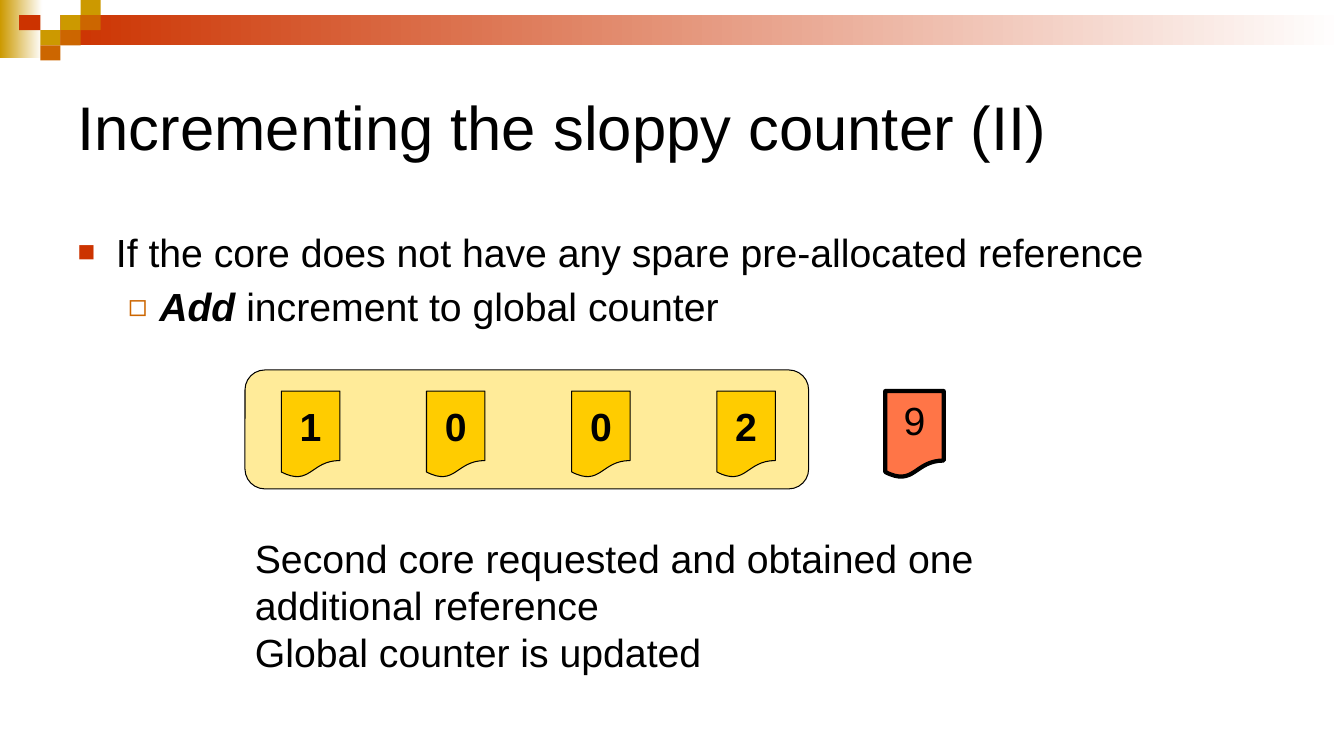
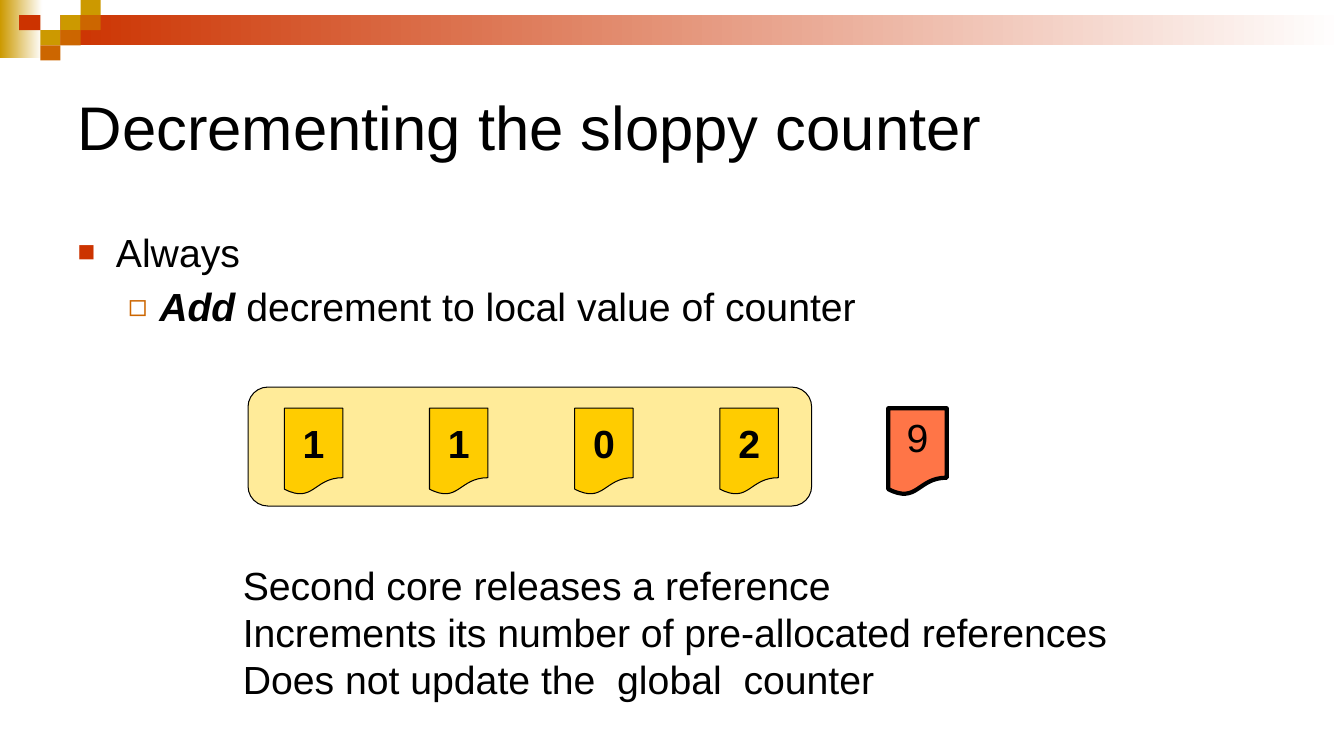
from pptx import Presentation
from pptx.dml.color import RGBColor
from pptx.enum.shapes import MSO_SHAPE as Preset
from pptx.enum.text import MSO_ANCHOR as Anchor, PP_ALIGN as Align
from pptx.oxml.ns import qn
from pptx.util import Inches, Pt
from lxml.etree import SubElement

COLORS = {
    "text": "000000", "white": "FFFFFF", "gold": "CC9900", "red": "CC3300",
    "orange": "CC6600", "panel": "FFEB99", "local": "FFCC00", "global": "FF7547",
}
FONT = "Arial"
BODY_SIZE = 28

# Bullet per list level: left indent, hanging indent, character, colour, size in percent
BULLETS = [
    (0.38, 0.38, "■", "red", 75),
    (0.81, 0.31, "◻", "orange", 80),
]

# Corner mosaic: left, top, width, colour
TILE_HEIGHT = 0.15
TILES = [
    (0.6, 0.15, 0.2, "gold"), (0.8, 0, 0.2, "gold"), (0.8, 0.15, 0.2, "orange"),
    (0.4, 0.3, 0.2, "gold"), (0.19, 0.15, 0.21, "red"), (0.6, 0.3, 0.2, "orange"),
    (0.4, 0.45, 0.2, "orange"),
]

SLIDES = [
    {
        "title": "Incrementing the sloppy counter (II)",
        "condition": "If the core does not have any spare pre-allocated reference",
        "action": " increment to global counter",
        "counters": (2.43, 3.67, "1002", "9"),
        "caption": (2.43, 5.25, "Second core requested and obtained one\n"
                                "additional reference\nGlobal counter is updated"),
    },
    {
        "title": "Decrementing the sloppy counter",
        "condition": "Always",
        "action": " decrement to local value of counter",
        "counters": (2.46, 3.84, "1102", "9"),
        "caption": (2.31, 5.52, "Second core releases a reference\n"
                                "Increments its number of pre-allocated references\n"
                                "Does not update the  global  counter"),
    },
]


def rgb(name):
    return RGBColor.from_string(COLORS[name])


def place(shape, left, top, width, height):
    shape.left, shape.top = Inches(left), Inches(top)
    shape.width, shape.height = Inches(width), Inches(height)


def format_text(text_frame, size=BODY_SIZE, align=Align.LEFT, bold=False):
    for para in text_frame.paragraphs:
        para.alignment = align
        for span in para.runs:
            span.font.name = FONT
            span.font.size = Pt(size)
            span.font.bold = bold
            span.font.color.rgb = rgb("text")


def add_box(shapes, preset, at, color, line_width=None, fade=False):
    """Add a filled shape, outlined in black or fading to white on the right."""
    box = shapes.add_shape(preset, *map(Inches, at))
    box.shadow.inherit = False
    if fade:
        box.fill.gradient()
        box.fill.gradient_angle = 0
        for stop, name in zip(box.fill.gradient_stops, (color, "white")):
            stop.color.rgb = rgb(name)
    else:
        box.fill.solid()
        box.fill.fore_color.rgb = rgb(color)
    if line_width:
        box.line.color.rgb = rgb("text")
        box.line.width = Pt(line_width)
    else:
        box.line.fill.background()
    return box


def set_bullet(para, level):
    indent, hanging, char, color, percent = BULLETS[level]
    para.level = level
    props = para._p.get_or_add_pPr()
    props.set("marL", str(Inches(indent)))
    props.set("indent", str(-Inches(hanging)))
    bullet_color = SubElement(props, qn("a:buClr"))
    SubElement(bullet_color, qn("a:srgbClr"), val=COLORS[color])
    SubElement(props, qn("a:buSzPct"), val=str(percent * 1000))
    SubElement(props, qn("a:buFont"), typeface=FONT)
    SubElement(props, qn("a:buChar"), char=char)


def decorate_layout(layout, slide):
    """Draw the top band with the slide's shape tools, then move it to the layout."""
    band = slide.shapes.add_group_shape()
    add_box(band.shapes, Preset.RECTANGLE, (0, 0, 0.42, 0.58), "gold", fade=True)
    add_box(band.shapes, Preset.RECTANGLE, (0.6, 0.15, 12.73, 0.3), "red", fade=True)
    for left, top, width, color in TILES:
        add_box(band.shapes, Preset.RECTANGLE, (left, top, width, TILE_HEIGHT), color)
    layout.shapes.element.insert(2, band.element)


def fill_title(title, text):
    title.text_frame.text = text
    title.text_frame.vertical_anchor = Anchor.MIDDLE
    format_text(title.text_frame, size=44)


def fill_list(body, condition, action):
    frame = body.text_frame
    frame.text = condition
    sub_item = frame.add_paragraph()
    keyword = sub_item.add_run()
    keyword.text = "Add"
    sub_item.add_run().text = action
    format_text(frame)
    keyword.font.bold = keyword.font.italic = True
    for level, para in enumerate(frame.paragraphs):
        set_bullet(para, level)


def add_counter(shapes, left, top, value, color, line_width, anchor, bold):
    card = add_box(shapes, Preset.FLOWCHART_DOCUMENT, (left, top, 0.58, 0.86),
                   color, line_width)
    card.text_frame.text = value
    card.text_frame.vertical_anchor = anchor
    format_text(card.text_frame, align=Align.CENTER, bold=bold)


def add_counters(slide, left, top, local_values, global_value):
    """Local counters on a panel, with the global counter to their right."""
    shapes = slide.shapes.add_group_shape().shapes
    add_box(shapes, Preset.FLOWCHART_ALTERNATE_PROCESS, (left, top, 5.59, 1.18),
            "panel", 0.75)
    card_top = top + 0.21
    for index, value in enumerate(local_values):
        add_counter(shapes, left + 0.36 + 1.44 * index, card_top, value,
                    "local", 0.75, Anchor.MIDDLE, True)
    add_counter(shapes, left + 6.35, card_top, global_value,
                "global", 3, Anchor.TOP, False)


def add_caption(slide, left, top, text):
    box = slide.shapes.add_textbox(*map(Inches, (left, top, 9, 1.51)))
    box.text_frame.word_wrap = True
    box.text_frame.text = text
    format_text(box.text_frame)


def main():
    deck = Presentation()
    deck.slide_width, deck.slide_height = Inches(13.33), Inches(7.5)

    # Shared layout: title and list positions
    layout = deck.slide_layouts[1]
    place(layout.placeholders[0], 0.67, 0.5, 12, 1.5)
    place(layout.placeholders[1], 0.67, 2.21, 12, 4.25)

    pages = [deck.slides.add_slide(layout) for _ in SLIDES]
    decorate_layout(layout, pages[0])

    # Slide content
    for page, content in zip(pages, SLIDES):
        fill_title(page.shapes.title, content["title"])
        fill_list(page.placeholders[1], content["condition"], content["action"])
        add_counters(page, *content["counters"])
        add_caption(page, *content["caption"])

    deck.save("out.pptx")


if __name__ == "__main__":
    main()
